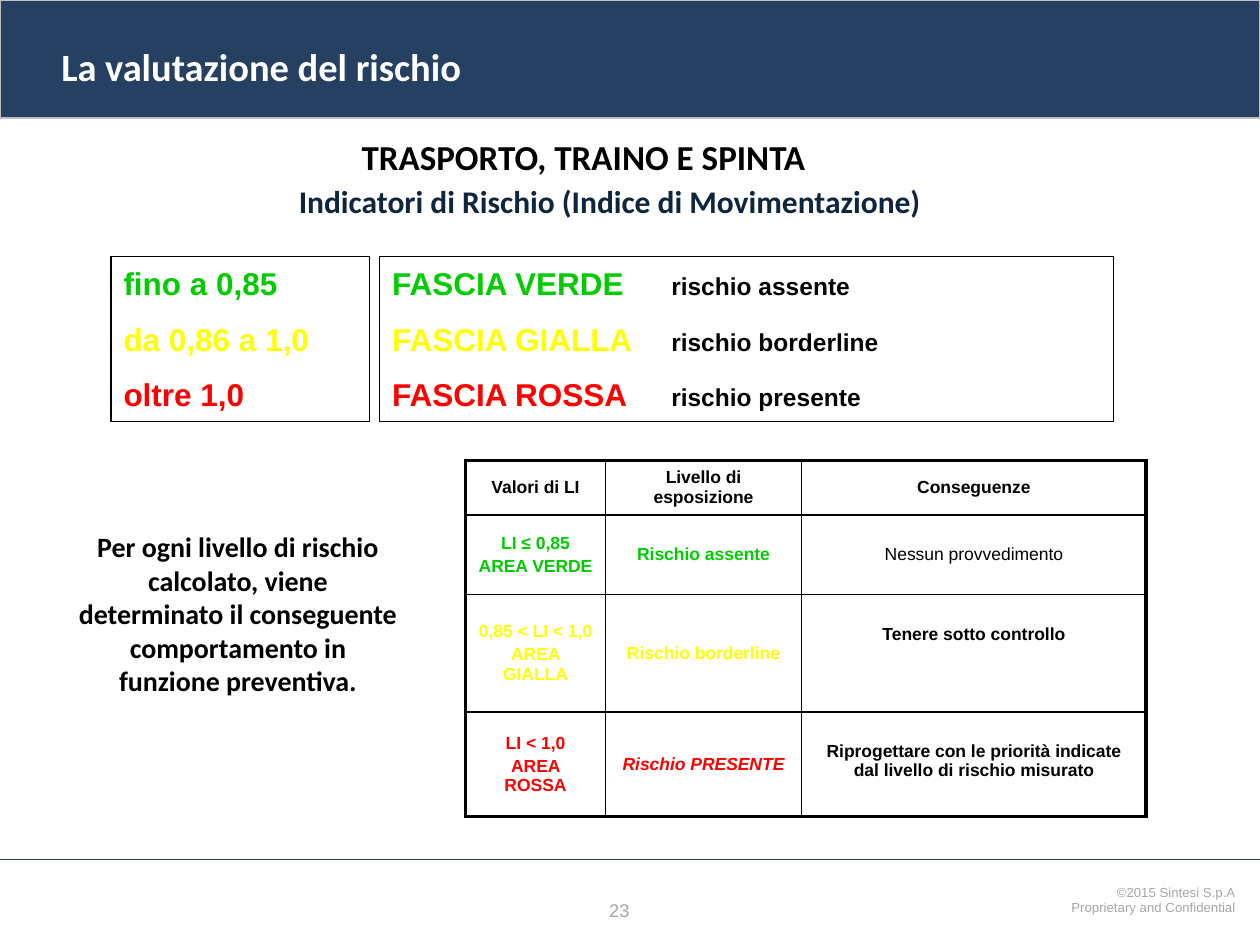
import pptx
import pptx.util
import pptx.dml.color
import pptx.enum.shapes
import pptx.enum.text
import pptx.oxml
import pptx.oxml.ns
from lxml import etree

Pt = pptx.util.Pt
ALIGN = pptx.enum.text.PP_ALIGN
ANCHOR = pptx.enum.text.MSO_ANCHOR
RECT = pptx.enum.shapes.MSO_SHAPE.RECTANGLE
qn = pptx.oxml.ns.qn

COLORS = {
    "navy": "254061", "ink": "0F243E", "black": "000000", "white": "FFFFFF",
    "border": "BFBFBF", "footer": "A6A6A6",
    "green": "00CC00", "yellow": "FFFF00", "red": "FF0000",
}

# Value range, band name, risk, colour
BANDS = [
    ("fino a 0,85", "FASCIA VERDE", "rischio assente", "green"),
    ("da 0,86 a 1,0", "FASCIA GIALLA", "rischio borderline", "yellow"),
    ("oltre 1,0", "FASCIA ROSSA", "rischio presente", "red"),
]

HEADERS = ["Valori di LI", "Livello di esposizione", "Conseguenze"]
LEVELS = [
    ("LI ≤ 0,85\nAREA VERDE", "Rischio assente", "Nessun provvedimento", "green"),
    ("0,85 < LI < 1,0\nAREA GIALLA", "Rischio borderline", "Tenere sotto controllo", "yellow"),
    ("LI < 1,0\nAREA ROSSA", "Rischio PRESENTE",
     "Riprogettare con le priorità indicate dal livello di rischio misurato", "red"),
]


def rgb(name):
    return pptx.dml.color.RGBColor.from_string(COLORS[name])


def style_run(r, size, color, font="Arial", bold=True, italic=False):
    r.font.name, r.font.size = font, Pt(size)
    r.font.bold, r.font.italic = bold, italic
    r.font.color.rgb = rgb(color)


def write(tf, text, size, color, align=ALIGN.LEFT, gap=0, **style):
    """Fill a text frame; gap is the space between paragraphs."""
    tf.text = text
    for i, p in enumerate(tf.paragraphs):
        p.alignment = align
        if i and gap:
            p.space_before = Pt(gap)
        for r in p.runs:
            style_run(r, size, color, **style)


def add_text(s, box, text, size, color, anchor=ANCHOR.TOP, **style):
    tf = s.shapes.add_textbox(*map(Pt, box)).text_frame
    tf.word_wrap = True
    tf.vertical_anchor = anchor
    write(tf, text, size, color, **style)
    return tf


def add_box(s, box, line, fill=None):
    sp = s.shapes.add_shape(RECT, *map(Pt, box))
    sp.shadow.inherit = False
    if fill:
        sp.fill.solid()
        sp.fill.fore_color.rgb = rgb(fill)
    else:
        sp.fill.background()
    sp.line.color.rgb = rgb(line)
    sp.line.width = Pt(0.75)
    return sp


def add_footer(s, x, y, w, h):
    add_text(s, (x + 341, y + 19.5, 38, 20), "23", 10.5, "footer", bold=False)
    tf = add_text(s, (x + w - 199, y + 11.5, 192, 25),
                  "©2015 Sintesi S.p.A\nProprietary and Confidential",
                  7.5, "footer", align=ALIGN.RIGHT, bold=False)
    for p in tf.paragraphs:
        p.line_spacing = 0.95
    rule = s.shapes.add_connector(pptx.enum.shapes.MSO_CONNECTOR.STRAIGHT,
                                  Pt(x), Pt(y), Pt(x + w), Pt(y))
    rule.line.color.rgb = rgb("navy")
    rule.line.width = Pt(0.5)
    etree.SubElement(rule._element.spPr, qn("a:effectLst"))


def add_header(s, x, y, w, h):
    add_box(s, (x, y, w, h), "border", "navy")
    add_text(s, (x + 28, y + 14.5, 621, 46), "La valutazione del rischio", 22, "white",
             anchor=ANCHOR.MIDDLE, font="Calibri")


def add_headings(s, x, y, w, h):
    add_text(s, (x, y, w - 20, 36), "TRASPORTO, TRAINO E SPINTA", 20, "black",
             anchor=ANCHOR.MIDDLE, align=ALIGN.CENTER, font="Calibri")
    add_text(s, (x + 5, y + 29, w, 29), "Indicatori di Rischio (Indice di Movimentazione)",
             18, "ink", align=ALIGN.CENTER, font="Calibri")


def add_bands(s, x, y, w, h):
    range_w, gutter = 147.5, 6
    ranges = add_box(s, (x, y, range_w, h), "black")
    names = add_box(s, (x + range_w + gutter, y, w - range_w - gutter, h), "black")
    for sp in (ranges, names):
        sp.text_frame.vertical_anchor = ANCHOR.TOP
        sp.text_frame.margin_top = Pt(4.5)
    write(ranges.text_frame, "\n".join(b[0] for b in BANDS), 18, "black", gap=10)
    write(names.text_frame, "\n".join(b[1] for b in BANDS), 18, "black", gap=10)
    for band, left, right in zip(BANDS, ranges.text_frame.paragraphs,
                                 names.text_frame.paragraphs):
        for p in (left, right):
            p.runs[0].font.color.rgb = rgb(band[3])
        # The risk starts at a tab stop
        tabs = etree.SubElement(right._p.get_or_add_pPr(), qn("a:tabLst"))
        etree.SubElement(tabs, qn("a:tab"), pos=str(Pt(159.5)), algn="l")
        r = right.add_run()
        r.text = "\t" + band[2]
        style_run(r, 14, "black")


def set_borders(cell, widths):
    tcPr = cell._tc.get_or_add_tcPr()
    for i, (side, width) in enumerate(widths.items()):
        ln = etree.Element(qn("a:ln" + side), w=str(Pt(width)))
        fill = etree.SubElement(ln, qn("a:solidFill"))
        etree.SubElement(fill, qn("a:srgbClr"), val=COLORS["black"])
        tcPr.insert(i, ln)


def add_level_table(s, x, y, col_widths, row_heights):
    rows, cols = len(row_heights), len(col_widths)
    table = s.shapes.add_table(rows, cols, Pt(x), Pt(y), Pt(sum(col_widths)),
                               Pt(sum(row_heights))).table
    table.first_row = table.horz_banding = False
    for col, width in zip(table.columns, col_widths):
        col.width = Pt(width)
    for row, height in zip(table.rows, row_heights):
        row.height = Pt(height)

    content = [HEADERS + ["black"]] + LEVELS
    for i, (*texts, color) in enumerate(content):
        for j, text in enumerate(texts):
            cell = table.cell(i, j)
            consequence = i > 0 and j == cols - 1
            cell.fill.background()
            cell.vertical_anchor = ANCHOR.TOP if consequence else ANCHOR.MIDDLE
            if consequence:
                cell.margin_top = Pt(17)
            write(cell.text_frame, text, 10, "black" if consequence else color,
                  align=ALIGN.CENTER, gap=2, bold=text != "Nessun provvedimento",
                  italic=text == "Rischio PRESENTE")
            # Thick outer frame, thin inner grid
            outer = {"L": j == 0, "R": j == cols - 1, "T": i == 0, "B": i == rows - 1}
            set_borders(cell, {side: 2.25 if edge else 1 for side, edge in outer.items()})


def add_comment(s, x, y, w, h):
    add_text(s, (x, y, w, h),
             "Per ogni livello di rischio calcolato, viene determinato il conseguente "
             "comportamento in funzione preventiva.",
             16, "black", align=ALIGN.CENTER, font="Calibri")


def main():
    prs = pptx.Presentation()
    prs.slide_width, prs.slide_height = Pt(720), Pt(540)
    s = prs.slides.add_slide(prs.slide_layouts[6])
    add_footer(s, 0, 491, 720, 49)
    add_header(s, 0, 0, 720, 67.5)
    add_headings(s, 13.5, 71.5, 660, 58)
    add_level_table(s, 266, 263, [80, 112, 197], [31, 45.5, 67, 60])
    add_comment(s, 37, 299, 198, 104)
    add_bands(s, 63.5, 146.5, 573, 94.5)
    prs.save("out.pptx")


if __name__ == "__main__":
    main()
